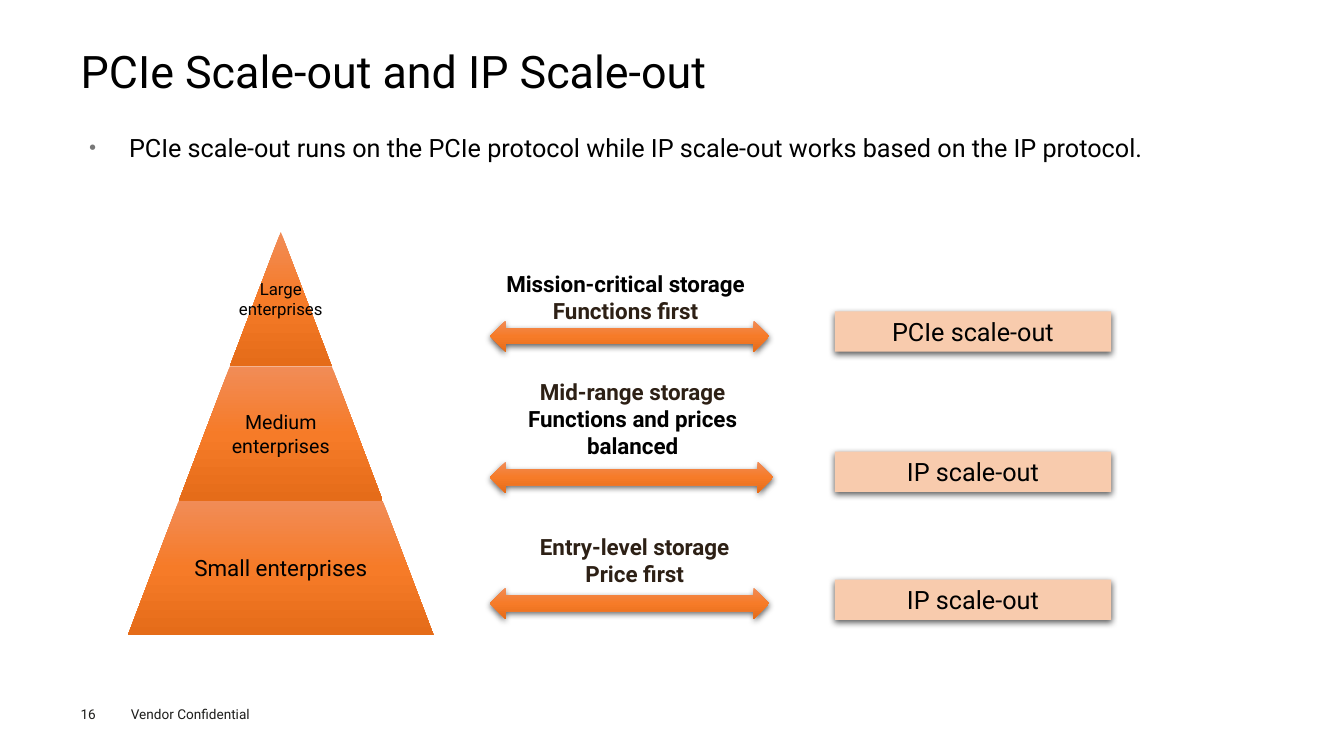
from copy import deepcopy

from lxml import etree
from pptx import Presentation
from pptx.dml.color import RGBColor
from pptx.enum.shapes import MSO_SHAPE
from pptx.enum.text import MSO_ANCHOR, PP_ALIGN
from pptx.oxml.ns import qn
from pptx.util import Inches, Pt

ARROW, RECT = MSO_SHAPE.LEFT_RIGHT_ARROW, MSO_SHAPE.RECTANGLE
TOP, MIDDLE = MSO_ANCHOR.TOP, MSO_ANCHOR.MIDDLE
LEFT, CENTER, JUSTIFY = PP_ALIGN.LEFT, PP_ALIGN.CENTER, PP_ALIGN.JUSTIFY

FONT = "Roboto"
BLACK, BROWN, FOOTER, PEACH = "000000", "2D2015", "1D1D1B", "F8CBAD"
ORANGES = ["F18C57", "F67B28", "E56C19"]
MARGIN, CONTENT_WIDTH = 0.8, 11.73

# label, font size, side inset; from the tip down
TIERS = [
    ("Large enterprises", 12, 0.02),
    ("Medium enterprises", 14, 0.37),
    ("Small enterprises", 16, 0.55),
]
# arrow top and width, label box, label lines with colours
LINKS = [
    (3.18, 2.77, (4.77, 2.63, 2.87, 0.64),
     [("Mission-critical storage", BLACK), ("Functions first", BROWN)]),
    (4.58, 2.81, (4.69, 3.7, 3.17, 0.91),
     [("Mid-range storage", BROWN), ("Functions and prices balanced", BLACK)]),
    (5.83, 2.77, (5.15, 5.24, 2.29, 0.64),
     [("Entry-level storage", BROWN), ("Price first", BROWN)]),
]
METHODS = [(3.09, "PCIe scale-out"), (4.48, "IP scale-out"), (5.75, "IP scale-out")]


def color(hex_code):
    return RGBColor.from_string(hex_code)


def inches(box):
    return [Inches(length) for length in box]


def write(shape, lines, size, align=LEFT, anchor=TOP, insets=(0.1, 0.05), bold=False):
    """Fill a shape with (text, colour) lines and return its paragraphs."""
    frame = shape.text_frame
    frame.word_wrap = True
    frame.vertical_anchor = anchor
    frame.margin_left = frame.margin_right = Inches(insets[0])
    frame.margin_top = frame.margin_bottom = Inches(insets[1])
    frame.text = "\n".join(text for text, _ in lines)
    for para, (_, hex_code) in zip(frame.paragraphs, lines):
        para.alignment = align
        para.font.name = FONT
        para.font.size = Pt(size)
        para.font.bold = bold
        para.font.color.rgb = color(hex_code)
    return frame.paragraphs


def add_text(page, box, *args, **options):
    return write(page.shapes.add_textbox(*inches(box)), *args, **options)


def fill_orange(shape):
    """Vertical three-stop gradient without an outline."""
    shape.fill.gradient()
    shape.fill.gradient_angle = 270
    stop_list = shape.element.spPr.find(qn("a:gradFill")).find(qn("a:gsLst"))
    stop_list.insert(1, deepcopy(stop_list[0]))
    for index, (stop, hex_code) in enumerate(zip(shape.fill.gradient_stops, ORANGES)):
        stop.position = index / 2
        stop.color.rgb = color(hex_code)
    shape.line.fill.background()


def cast_shadow(shape):
    shape.shadow.inherit = False
    effects = shape.element.spPr.find(qn("a:effectLst"))
    shadow = etree.SubElement(effects, qn("a:outerShdw"), blurRad=str(Pt(4.5)),
                              dist=str(Pt(1.5)), dir="5400000", rotWithShape="0")
    tint = etree.SubElement(shadow, qn("a:srgbClr"), val=BLACK)
    etree.SubElement(tint, qn("a:alpha"), val="63000")


def add_bullet(para, indent):
    properties = para._p.get_or_add_pPr()
    properties.set("marL", str(Inches(indent)))
    properties.set("indent", str(-Inches(indent)))
    bullet_color = etree.Element(qn("a:buClr"))
    etree.SubElement(bullet_color, qn("a:srgbClr"), val="777777")
    bullet = [bullet_color,
              etree.Element(qn("a:buSzPct"), val="28000"),
              etree.Element(qn("a:buFont"), typeface=FONT),
              etree.Element(qn("a:buChar"), char="●")]
    default_run = properties.find(qn("a:defRPr"))
    for element in bullet:
        default_run.addprevious(element)


def add_heading(page, box):
    title = page.shapes.title
    title.left, title.top, title.width, title.height = inches(box)
    lines = [("PCIe Scale-out and IP Scale-out", BLACK)]
    para = write(title, lines, 32, insets=(0, 0))[0]
    para.line_spacing = 0.9


def add_statement(page, box):
    lines = [("PCIe scale-out runs on the PCIe protocol while IP scale-out "
              "works based on the IP protocol.", BLACK)]
    para = add_text(page, box, lines, 18, align=JUSTIFY, insets=(0.09, 0.04))[0]
    para.line_spacing = 1.4
    add_bullet(para, 0.39)


def add_pyramid(page, box):
    left, top, width, height = inches(box)
    center = left + width / 2
    step, half_step = height / len(TIERS), width / 2 / len(TIERS)
    for row, (label, size, inset) in enumerate(TIERS):
        upper, lower = top + row * step, top + (row + 1) * step
        half_top, half_bottom = row * half_step, (row + 1) * half_step
        builder = page.shapes.build_freeform(center - half_bottom, lower)
        builder.add_line_segments([(center - half_top, upper), (center + half_top, upper),
                                   (center + half_bottom, lower)], close=True)
        tier = builder.convert_to_shape()
        tier.shadow.inherit = False
        fill_orange(tier)
        write(tier, [(label, BLACK)], size, CENTER, MIDDLE, (inset, 0.02))


def add_links(page, left, height):
    for top, width, label_box, lines in LINKS:
        arrow = page.shapes.add_shape(ARROW, *inches((left, top, width, height)))
        fill_orange(arrow)
        cast_shadow(arrow)
        add_text(page, label_box, lines, 16, align=CENTER, bold=True)


def add_methods(page, left, width, height):
    for top, label in METHODS:
        panel = page.shapes.add_shape(RECT, *inches((left, top, width, height)))
        panel.fill.solid()
        panel.fill.fore_color.rgb = color(PEACH)
        panel.line.fill.background()
        cast_shadow(panel)
        write(panel, [(label, BLACK)], 18, CENTER, MIDDLE)


def add_footer(page, left, top):
    add_text(page, (left, top, 0.4, 0.16), [("16", FOOTER)], 9.7, insets=(0, 0))
    add_text(page, (left + 0.4, top - 0.05, 1.6, 0.27),
             [("Vendor Confidential", FOOTER)], 9.7)


def main():
    deck = Presentation()
    deck.slide_width, deck.slide_height = Inches(13.33), Inches(7.5)
    page = deck.slides.add_slide(deck.slide_layouts.get_by_name("Title Only"))
    add_heading(page, (MARGIN, 0.49, CONTENT_WIDTH, 0.54))
    add_statement(page, (MARGIN, 1.15, CONTENT_WIDTH, 0.6))
    add_pyramid(page, (1.27, 2.3, 3.03, 4))
    add_links(page, left=4.86, height=0.31)
    add_methods(page, left=8.28, width=2.74, height=0.4)
    add_footer(page, MARGIN, 7)
    deck.save("out.pptx")


if __name__ == "__main__":
    main()
